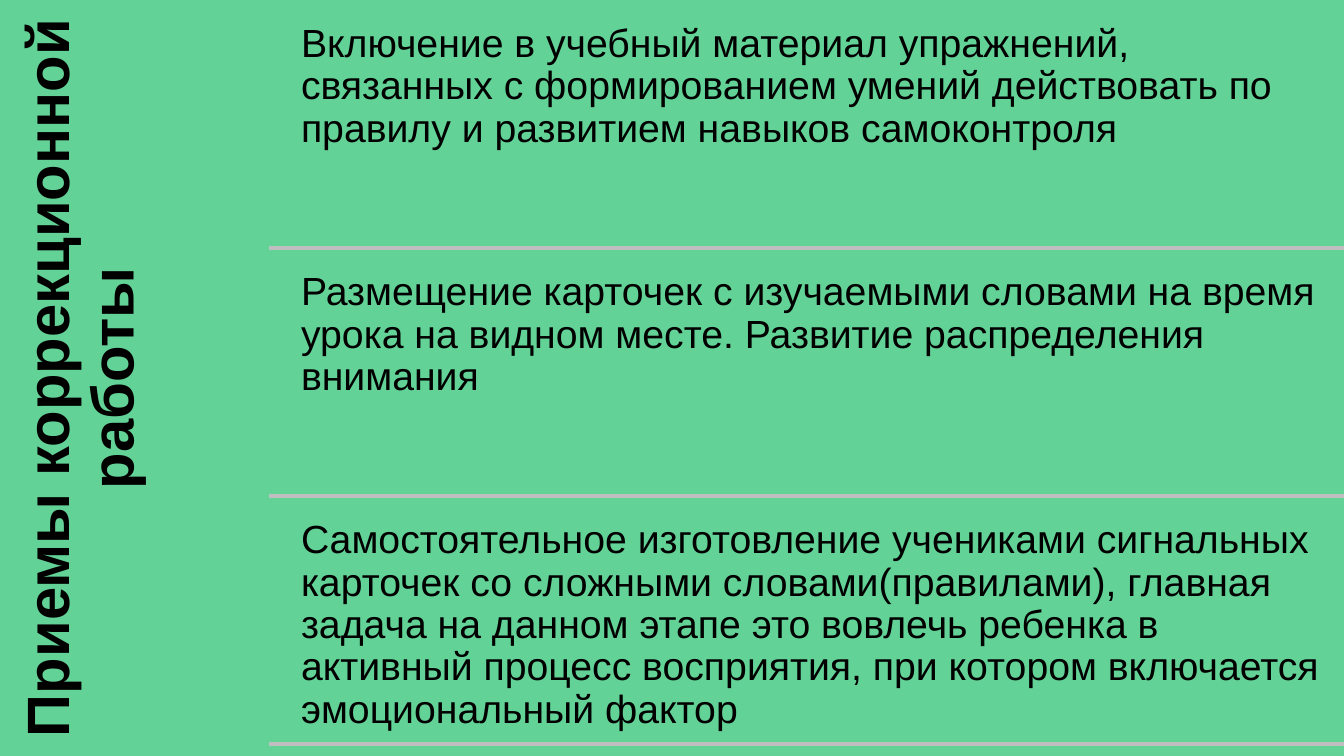
from pptx import Presentation
from pptx.dml.color import RGBColor
from pptx.enum.shapes import MSO_CONNECTOR
from pptx.enum.text import MSO_ANCHOR, MSO_AUTO_SIZE, PP_ALIGN
from pptx.oxml.ns import qn
from pptx.util import Cm, Pt
from lxml.etree import SubElement

# Content
HEAD = "Приемы коррекционной работы"
ITEMS = [
    "Включение в учебный материал упражнений, связанных с формированием "
    "умений действовать по правилу и развитием навыков самоконтроля",
    "Размещение карточек с изучаемыми словами на время урока на видном "
    "месте. Развитие распределения внимания",
    "Самостоятельное изготовление учениками сигнальных карточек со сложными "
    "словами(правилами), главная задача на данном этапе это вовлечь ребенка "
    "в активный процесс восприятия, при котором включается эмоциональный фактор",
]

# Layout in centimetres
WIDE, HIGH = 25.4, 14.29
SIDE = 5.08   # width of the title column
LEFT = 5.46   # left edge of the item texts
STEP = 4.69   # distance between rules
GAP = 0.22    # space between a rule and the text below


def paint(fmt, color):
    fmt.rgb = RGBColor.from_string(color)


def write(shape, text, size=21, bold=False, align=PP_ALIGN.LEFT, inset=0.23):
    frame = shape.text_frame
    frame.word_wrap = True
    frame.auto_size = MSO_AUTO_SIZE.NONE
    frame.vertical_anchor = MSO_ANCHOR.TOP
    frame.margin_left = frame.margin_right = Cm(inset)
    frame.margin_top = frame.margin_bottom = Cm(inset)
    par = frame.paragraphs[0]
    par.alignment = align
    par.line_spacing = 0.9
    par.space_before = Pt(0)
    run = par.add_run()
    run.text = text
    run.font.name = "Arial"
    run.font.size = Pt(size)
    run.font.bold = bold
    paint(run.font.color, "000000")


def rule(slide, y):
    line = slide.shapes.add_connector(
        MSO_CONNECTOR.STRAIGHT, Cm(SIDE), Cm(y), Cm(WIDE), Cm(y))
    line.line.width = Pt(2)
    paint(line.line.color, "BFBFC1")
    SubElement(line._element.spPr, qn("a:effectLst"))


def main():
    deck = Presentation()
    deck.slide_width, deck.slide_height = Cm(WIDE), Cm(HIGH)
    slide = deck.slides.add_slide(deck.slide_layouts[5])
    fill = slide.background.fill
    fill.solid()
    paint(fill.fore_color, "63D297")

    # Title, turned about its centre to fill the left column
    title = slide.shapes.title
    title.left, title.top = Cm((SIDE - HIGH) / 2), Cm((HIGH - SIDE) / 2)
    title.width, title.height = Cm(HIGH), Cm(SIDE)
    title.rotation = 270
    write(title, HEAD, size=32, bold=True, align=PP_ALIGN.CENTER, inset=0.33)

    # Items, each closed by a rule
    for i, text in enumerate(ITEMS):
        box = slide.shapes.add_textbox(
            Cm(LEFT), Cm(i * STEP + GAP), Cm(WIDE - LEFT), Cm(STEP - GAP))
        write(box, text)
        rule(slide, (i + 1) * STEP)

    deck.save("out.pptx")


if __name__ == "__main__":
    main()
